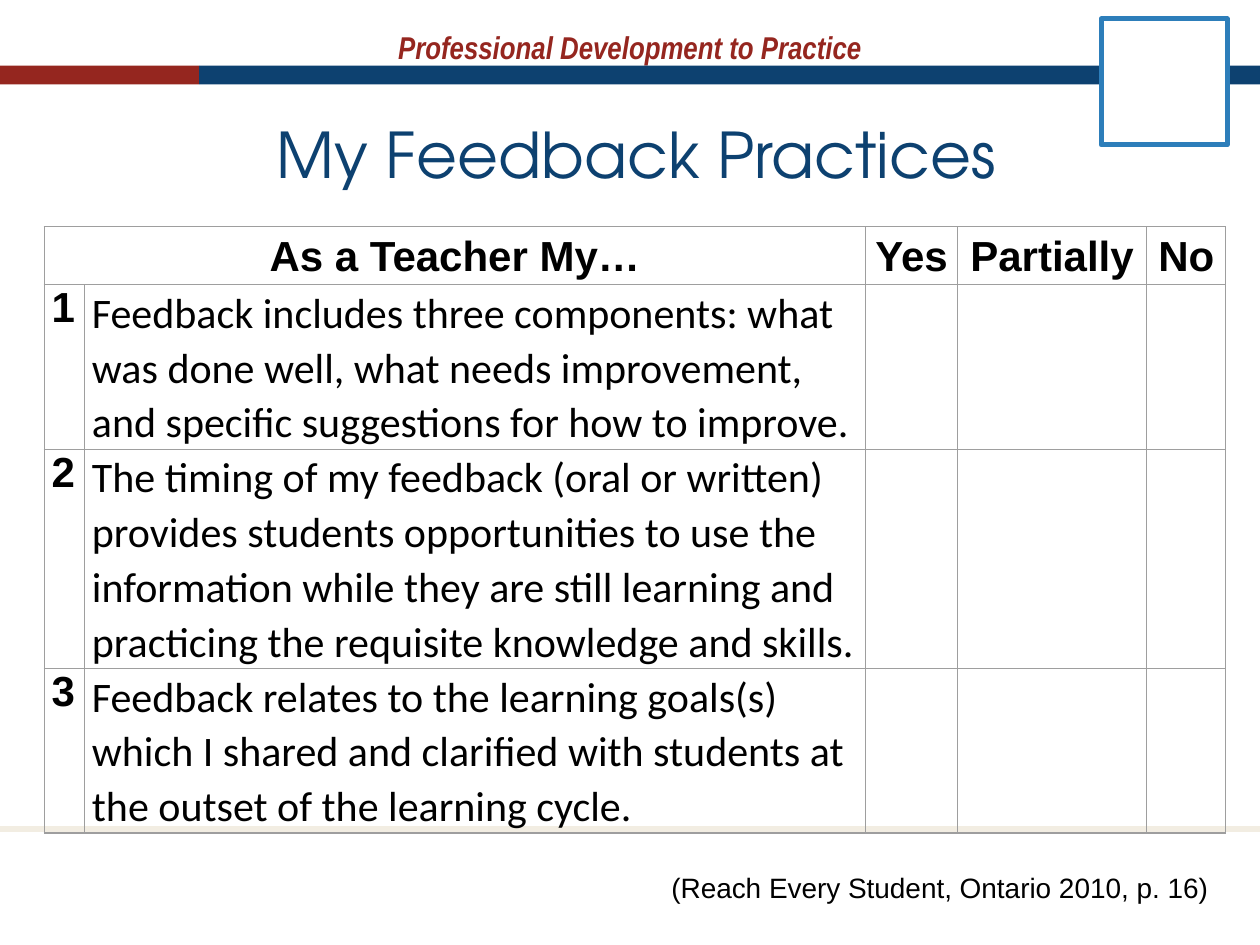
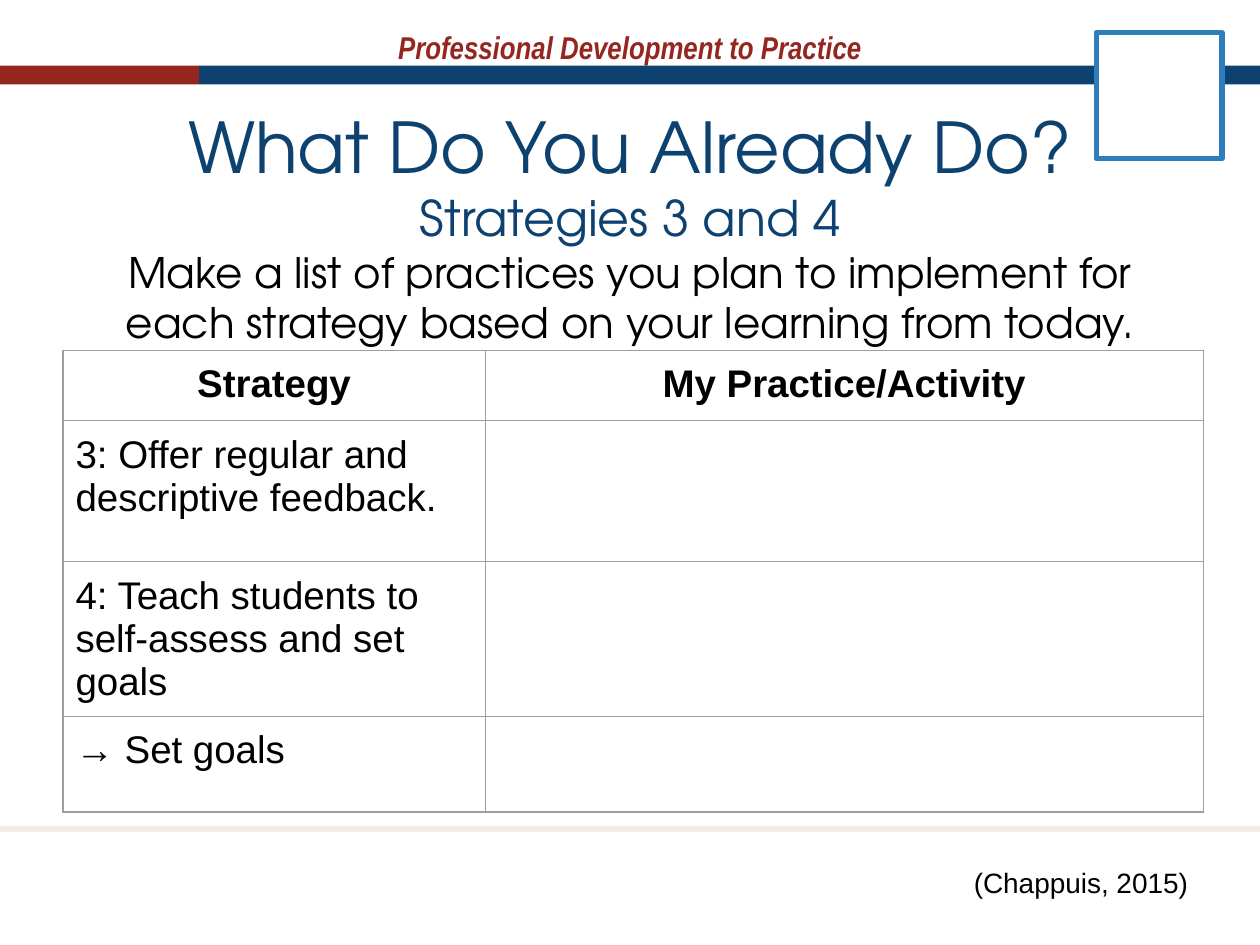
"""Build two slides on classroom feedback practices."""
from lxml.etree import SubElement
from pptx import Presentation
from pptx.dml.color import RGBColor
from pptx.enum.shapes import MSO_CONNECTOR, MSO_SHAPE
from pptx.enum.text import MSO_ANCHOR, MSO_AUTO_SIZE, PP_ALIGN
from pptx.oxml import parse_xml
from pptx.oxml.ns import nsdecls, qn
from pptx.util import Inches, Pt

RED = RGBColor(0x95, 0x26, 0x1F)
NAVY = RGBColor(0x0D, 0x41, 0x70)
BLUE = RGBColor(0x2D, 0x7E, 0xBA)
BEIGE = RGBColor(0xF2, 0xED, 0xE2)
GRAY = RGBColor(0x9E, 0x9E, 0x9E)
WHITE = RGBColor(0xFF, 0xFF, 0xFF)
BLACK = RGBColor(0, 0, 0)

TITLE_FONT = "TeX Gyre Adventor"
BANNER = "Professional Development to Practice"
SLIDE_WIDTH, SLIDE_HEIGHT = 10, 7.5
BAND_TOP, BAND_HEIGHT, RED_WIDTH = 0.52, 0.15, 1.58
FOOTER_TOP = 6.58

CENTERED = {"bold": True, "align": PP_ALIGN.CENTER}
SPACED = {"line_spacing": 1.07, "anchor": MSO_ANCHOR.MIDDLE}

SLIDES = [
    {
        "title": [("My Feedback Practices", 36, NAVY)],
        "title_box": (1.05, 0.82, 8, 0.79),
        "square": (8.74, 0.15),
        "citation": "(Reach Every Student, Ontario 2010, p. 16)",
        "citation_box": (5.23, 6.86, 4.5, 0.37),
        "citation_wrap": True,
        "table": {
            "box": (0.35, 1.8, 9.38, 4.68),
            "columns": [0.32, 6.2, 0.73, 1.5, 0.63],
            "heights": [0.46, 0.79, 1.18, 0.85],
            "margins": (0.06, 0),
            "size": 24,
            "header_span": 2,
            "header_format": {**CENTERED, **SPACED},
            "column_formats": [{"bold": True}, {"font": "Calibri", **SPACED}],
            "rows": [
                ["As a Teacher My…", "", "Yes", "Partially", "No"],
                ["1", "Feedback includes three components: what was done well, "
                      "what needs improvement, and specific suggestions for how to improve."],
                ["2", "The timing of my feedback (oral or written) provides students "
                      "opportunities to use the information while they are still learning "
                      "and practicing the requisite knowledge and skills."],
                ["3", "Feedback relates to the learning goals(s) which I shared and "
                      "clarified with students at the outset of the learning cycle."],
            ],
        },
    },
    {
        "title": [
            ("What Do You Already Do?", 40, NAVY),
            ("Strategies 3 and 4", 28, NAVY),
            ("Make a list of practices you plan to implement for each strategy "
             "based on your learning from today.", 24, BLACK),
        ],
        "title_box": (0.5, 0.49, 9, 2.6),
        "square": (8.7, 0.26),
        "citation": "(Chappuis, 2015)",
        "citation_box": (7.63, 6.82, 1.92, 0.37),
        "citation_wrap": False,
        "table": {
            "box": (0.5, 2.78, 9.05, 3.74),
            "columns": [3.35, 5.7],
            "heights": [0.56, 1.12, 1.2, 0.76],
            "margins": (0.1, 0.1),
            "size": 22,
            "header_span": 1,
            "header_format": CENTERED,
            "column_formats": [{}],
            "rows": [
                ["Strategy", "My Practice/Activity"],
                ["3: Offer regular and descriptive feedback."],
                ["4: Teach students to self-assess and set goals"],
                ["→ Set goals"],
            ],
        },
    },
]


def inches(values):
    return [Inches(value) for value in values]


def write_text(paragraph, lines, font="Arial", bold=False, italic=False,
               align=PP_ALIGN.LEFT, line_spacing=None):
    """Write (text, size, color) lines into one paragraph."""
    paragraph.alignment = align
    if line_spacing:
        paragraph.line_spacing = line_spacing
    for index, (text, size, color) in enumerate(lines):
        if index:
            paragraph.add_line_break()
        run = paragraph.add_run()
        run.text = text
        run.font.name = font
        run.font.size = Pt(size)
        run.font.color.rgb = color
        run.font.bold = bold
        run.font.italic = italic


def add_text(slide, box, lines, margin=0.05, anchor=MSO_ANCHOR.TOP, wrap=True,
             auto_size=MSO_AUTO_SIZE.NONE, **text_format):
    """Add a text box holding one paragraph."""
    frame = slide.shapes.add_textbox(*inches(box)).text_frame
    frame.word_wrap = wrap
    frame.auto_size = auto_size
    frame.vertical_anchor = anchor
    frame.margin_top = frame.margin_bottom = Inches(margin)
    write_text(frame.paragraphs[0], lines, **text_format)


def add_rectangle(slide, box, fill, line=None):
    """Add a flat rectangle with an optional outline."""
    shape = slide.shapes.add_shape(MSO_SHAPE.RECTANGLE, *inches(box))
    shape.shadow.inherit = False
    shape.fill.solid()
    shape.fill.fore_color.rgb = fill
    if line is None:
        shape.line.fill.background()
    else:
        shape.line.color.rgb = line
        shape.line.width = Pt(3)


def add_frame(slide):
    """Add the banner, colored band and footer rule shared by all slides."""
    add_text(slide, (0, 0.17, SLIDE_WIDTH, 0.4), [(BANNER, 18, RED)],
             font="Arial Narrow", bold=True, italic=True, align=PP_ALIGN.CENTER)
    add_rectangle(slide, (0, BAND_TOP, RED_WIDTH, BAND_HEIGHT), RED)
    add_rectangle(slide, (RED_WIDTH, BAND_TOP, SLIDE_WIDTH - RED_WIDTH, BAND_HEIGHT), NAVY)
    rule = slide.shapes.add_connector(
        MSO_CONNECTOR.STRAIGHT, *inches((0, FOOTER_TOP, SLIDE_WIDTH, FOOTER_TOP)))
    rule.line.color.rgb = BEIGE
    rule.line.width = Pt(3)
    SubElement(rule._element.spPr, qn("a:effectLst"))


def set_borders(cell):
    """Draw a thin gray line on each side of a cell."""
    properties = cell._tc.get_or_add_tcPr()
    for index, side in enumerate(("lnL", "lnR", "lnT", "lnB")):
        properties.insert(index, parse_xml(
            f'<a:{side} {nsdecls("a")} w="{Pt(0.75)}"><a:solidFill>'
            f'<a:srgbClr val="{GRAY}"/></a:solidFill></a:{side}>'))


def add_grid(slide, content):
    """Add a plain bordered table."""
    columns, heights, rows = content["columns"], content["heights"], content["rows"]
    graphic = slide.shapes.add_table(len(heights), len(columns), *inches(content["box"]))
    table = graphic.table
    table.first_row = table.horz_banding = False
    for column, width in zip(table.columns, columns):
        column.width = Inches(width)
    for row, height in zip(table.rows, heights):
        row.height = Inches(height)
    graphic.height = Inches(content["box"][3])
    if content["header_span"] > 1:
        table.cell(0, 0).merge(table.cell(0, content["header_span"] - 1))
    side, top = inches(content["margins"])
    for row_index, row in enumerate(table.rows):
        texts = rows[row_index]
        for column_index, cell in enumerate(row.cells):
            cell.fill.background()
            set_borders(cell)
            cell.margin_left = cell.margin_right = side
            cell.margin_top = cell.margin_bottom = top
            if column_index >= len(texts) or not texts[column_index]:
                continue
            if row_index == 0:
                text_format = dict(content["header_format"])
            else:
                text_format = dict(content["column_formats"][column_index])
            cell.vertical_anchor = text_format.pop("anchor", MSO_ANCHOR.TOP)
            write_text(cell.text_frame.paragraphs[0],
                       [(texts[column_index], content["size"], BLACK)], **text_format)


def main():
    presentation = Presentation()
    presentation.slide_width = Inches(SLIDE_WIDTH)
    presentation.slide_height = Inches(SLIDE_HEIGHT)
    for content in SLIDES:
        slide = presentation.slides.add_slide(presentation.slide_layouts[6])
        add_frame(slide)
        add_text(slide, content["title_box"], content["title"], margin=0.1,
                 anchor=MSO_ANCHOR.MIDDLE, font=TITLE_FONT, align=PP_ALIGN.CENTER)
        add_grid(slide, content["table"])
        add_rectangle(slide, (*content["square"], 1, 1), WHITE, line=BLUE)
        add_text(slide, content["citation_box"], [(content["citation"], 16, BLACK)],
                 wrap=content["citation_wrap"], auto_size=MSO_AUTO_SIZE.SHAPE_TO_FIT_TEXT)
    presentation.save("out.pptx")


if __name__ == "__main__":
    main()
